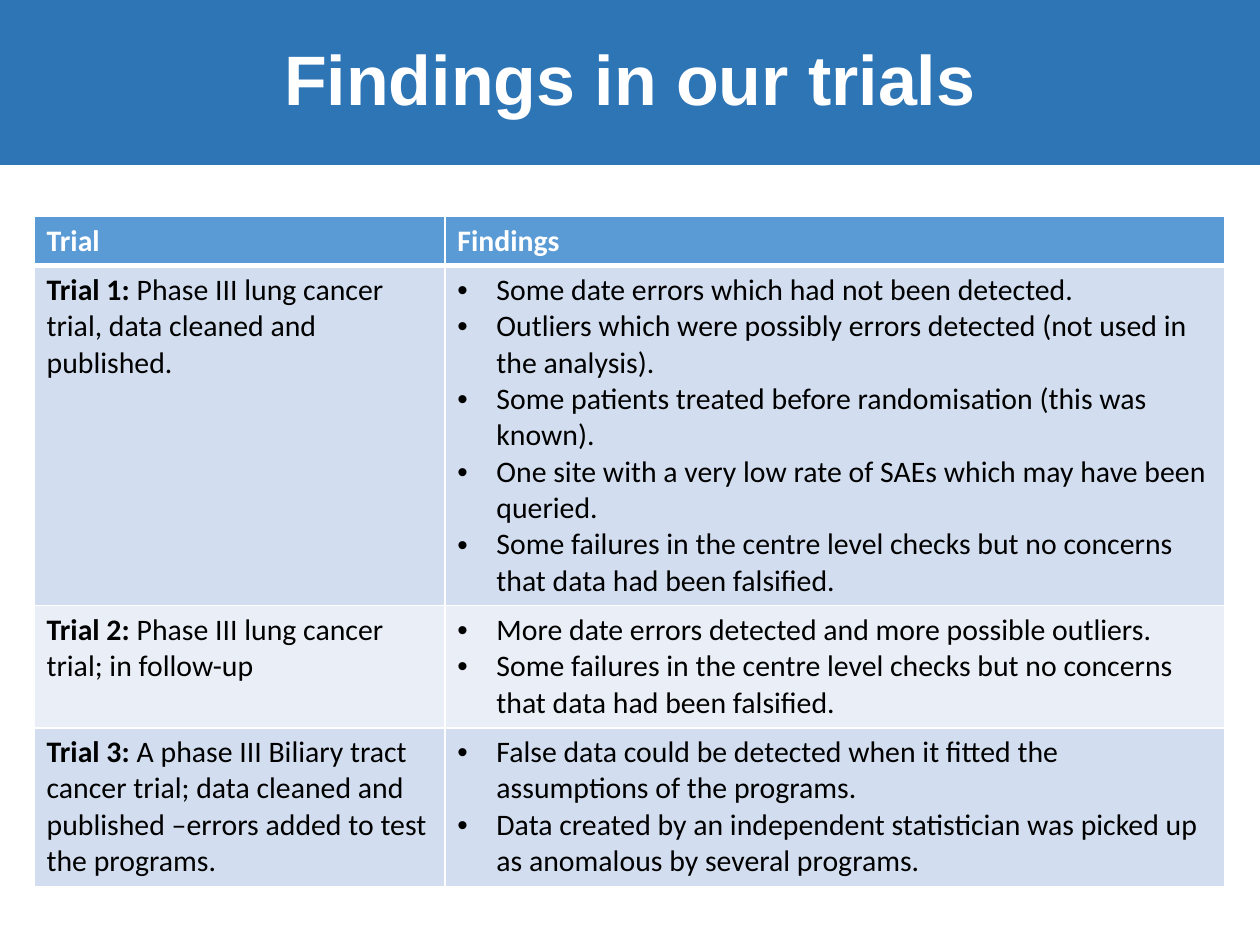
import pptx
import pptx.util
import pptx.dml.color
import pptx.enum.shapes
import pptx.enum.text
import pptx.oxml
import pptx.oxml.ns
import lxml.etree

COLORS = {
    "banner": "2E75B6",
    "header": "5B9BD5",
    "band_dark": "D2DEEF",
    "band_light": "EAEFF7",
    "white": "FFFFFF",
    "black": "000000",
}

TRIALS = [
    ("Trial 1: ", "Phase III lung cancer trial, data cleaned and published.", [
        "Some date errors which had not been detected.",
        "Outliers which were possibly errors detected (not used in the analysis).",
        "Some patients treated before randomisation (this was known).",
        "One site with a very low rate of SAEs which may have been queried.",
        "Some failures in the centre level checks but no concerns that data had been falsified.",
    ]),
    ("Trial 2: ", "Phase III lung cancer trial; in follow-up", [
        "More date errors detected and more possible outliers.",
        "Some failures in the centre level checks but no concerns that data had been falsified.",
    ]),
    ("Trial 3: ", "A phase III Biliary tract cancer trial; data cleaned and published "
     "–errors added to test the programs.", [
        "False data could be detected when it fitted the assumptions of the programs.",
        "Data created by an independent statistician was picked up as anomalous by several programs.",
    ]),
]


class Deck:
    def __init__(self, width, height):
        self.prs = pptx.Presentation()
        self.prs.slide_width = pptx.util.Inches(width)
        self.prs.slide_height = pptx.util.Inches(height)
        self.s = self.prs.slides.add_slide(self.prs.slide_layouts[6])
        self.title_font, self.title_size = "Arial", 40
        self.body_font, self.body_size = "Calibri", 17

    def x(self, share):
        return round(self.prs.slide_width * share)

    def y(self, share):
        return round(self.prs.slide_height * share)

    def color(self, name):
        return pptx.dml.color.RGBColor.from_string(COLORS[name])

    def run(self, p, text, font, size, color, bold=False):
        r = p.add_run()
        r.text = text
        r.font.name = font
        r.font.size = pptx.util.Pt(size)
        r.font.bold = bold
        r.font.color.rgb = self.color(color)

    def banner(self, text, height):
        sp = self.s.shapes.add_shape(pptx.enum.shapes.MSO_SHAPE.RECTANGLE,
                                     0, 0, self.x(1), self.y(height))
        sp.shadow.inherit = False
        sp.fill.solid()
        sp.fill.fore_color.rgb = self.color("banner")
        sp.line.fill.background()
        tf = sp.text_frame
        tf.word_wrap = True
        tf.vertical_anchor = pptx.enum.text.MSO_ANCHOR.MIDDLE
        p = tf.paragraphs[0]
        p.alignment = pptx.enum.text.PP_ALIGN.CENTER
        p.line_spacing = 0.9
        self.run(p, text, self.title_font, self.title_size, "white", True)

    def table(self, left, top, cols, rows):
        frame = self.s.shapes.add_table(len(rows), len(cols), self.x(left), self.y(top),
                                        self.x(sum(cols)), self.y(sum(rows)))
        for col, share in zip(frame.table.columns, cols):
            col.width = self.x(share)
        for row, share in zip(frame.table.rows, rows):
            row.height = self.y(share)
        return frame.table

    def cell(self, cell, fill, paragraphs, color="black", bullets=False, top=1, bottom=1):
        cell.fill.solid()
        cell.fill.fore_color.rgb = self.color(fill)
        self.borders(cell, {"lnL": 1, "lnR": 1, "lnT": top, "lnB": bottom})
        tf = cell.text_frame
        for i, runs in enumerate(paragraphs):
            p = tf.add_paragraph() if i else tf.paragraphs[0]
            if bullets:
                self.bullet(p)
            for text, bold in runs:
                self.run(p, text, self.body_font, self.body_size, color, bold)

    def borders(self, cell, widths):
        tc_pr = cell._tc.get_or_add_tcPr()
        for i, (tag, width) in enumerate(widths.items()):
            tc_pr.insert(i, pptx.oxml.parse_xml(
                f'<a:{tag} {pptx.oxml.ns.nsdecls("a")} w="{pptx.util.Pt(width)}">'
                f'<a:solidFill><a:srgbClr val="{COLORS["white"]}"/></a:solidFill></a:{tag}>'))

    def bullet(self, p):
        indent = pptx.util.Inches(0.31)
        p_pr = p._p.get_or_add_pPr()
        p_pr.set("marL", str(indent))
        p_pr.set("indent", str(-indent))
        for tag, key, value in (("a:buFont", "typeface", "Arial"), ("a:buChar", "char", "•")):
            lxml.etree.SubElement(p_pr, pptx.oxml.ns.qn(tag)).set(key, value)


def main():
    deck = Deck(10, 7.5)
    deck.banner("Findings in our trials", 1.31 / 7.5)
    rows = [h / 7.5 for h in (0.37, 2.69, 0.97, 1.26)]
    table = deck.table(0.027, 1.72 / 7.5, (0.326, 0.619), rows)
    for col, heading in enumerate(("Trial", "Findings")):
        deck.cell(table.cell(0, col), "header", [[(heading, True)]], "white", bottom=3)
    for row, (name, description, findings) in enumerate(TRIALS, 1):
        fill = "band_dark" if row % 2 else "band_light"
        top = 3 if row == 1 else 1
        deck.cell(table.cell(row, 0), fill, [[(name, True), (description, False)]], top=top)
        deck.cell(table.cell(row, 1), fill, [[(text, False)] for text in findings],
                  bullets=True, top=top)
    deck.prs.save("out.pptx")


if __name__ == "__main__":
    main()
